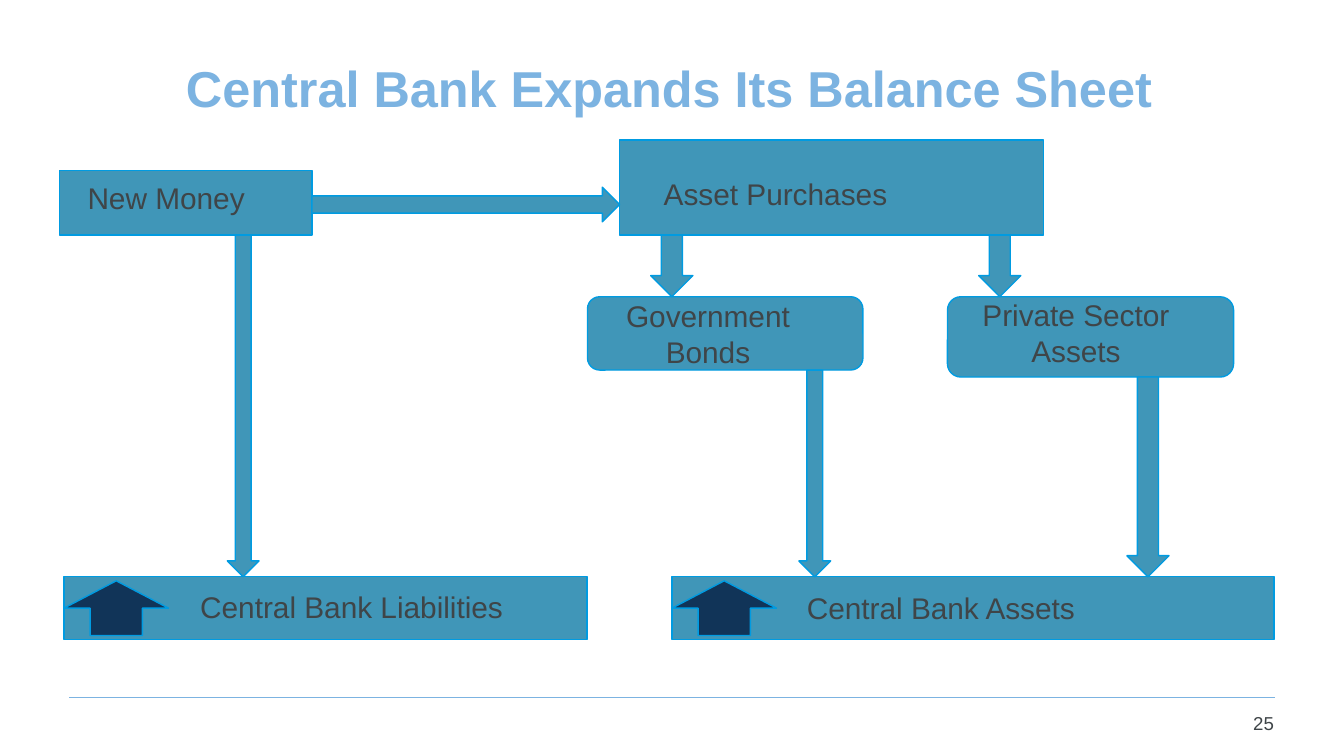
from pptx import Presentation, util as u
from pptx.dml.color import RGBColor
from pptx.enum import shapes, text
from pptx.oxml.ns import qn
from lxml import etree

Pt = u.Pt
KIND = shapes.MSO_SHAPE
ALIGN = text.PP_ALIGN

THEME = {
    "font": "Arial", "title_size": 27, "label_size": 16, "number_size": 10,
    "accent": "7CB3E1", "ink": "3F4548", "box": "4096B8",
    "edge": "009BE1", "rise": "113458",
}
TITLE = "Central Bank Expands Its Balance Sheet"
PAGE_NUMBER = "25"

BOXES = {
    "purchases": (KIND.RECTANGLE, (332, 75, 227, 51)),
    "bonds": (KIND.ROUNDED_RECTANGLE, (314.7, 159, 147.6, 39.3)),
    "private": (KIND.ROUNDED_RECTANGLE, (507.6, 159, 153.3, 43)),
    "money": (KIND.RECTANGLE, (31.8, 91.5, 135.4, 34.5)),
    "liabilities": (KIND.RECTANGLE, (34.3, 309, 280.3, 33.7)),
    "assets": (KIND.RECTANGLE, (360, 309, 322.5, 33.7)),
}
LABELS = [
    ("Asset Purchases", (348.5, 90.6, 193, 26.6), ALIGN.LEFT),
    ("Government Bonds", (319.9, 156, 118.8, 46), ALIGN.CENTER),
    ("Private Sector Assets", (517, 155.5, 118.8, 46), ALIGN.CENTER),
    ("New Money", (39.8, 92.5, 118.8, 26.6), ALIGN.LEFT),
    ("Central Bank Liabilities", (100.2, 312, 192.2, 26.6), ALIGN.LEFT),
    ("Central Bank Assets", (425.2, 312.6, 221, 26.6), ALIGN.LEFT),
]
FLOWS_DOWN = [
    ("purchases", "bonds", 359.9, 22.6),
    ("purchases", "private", 535.6, 22.6),
    ("money", "liabilities", 130.3, 17),
    ("bonds", "assets", 436.5, 17),
    ("private", "assets", 615, 22.6),
]
FLOW_RIGHT = ("money", "purchases", 109.6, 18.6)
RISING = ["liabilities", "assets"]
RISE_WIDTH, RISE_HEIGHT = 56, 29.3


def color(name):
    """Return a theme colour."""
    return RGBColor.from_string(THEME[name])


def add_block(slide, kind, place, fill="box"):
    """Add a filled and outlined preset shape."""
    block = slide.shapes.add_shape(kind, *map(Pt, place))
    block.shadow.inherit = False
    block.fill.solid()
    block.fill.fore_color.rgb = color(fill)
    block.line.color.rgb = color("edge")
    block.line.width = Pt(0.75)


def add_words(slide, words, place, align, size="label_size", ink="ink",
              bold=False, anchor=text.MSO_ANCHOR.TOP):
    """Add a wrapped text box holding one run."""
    frame = slide.shapes.add_textbox(*map(Pt, place)).text_frame
    frame.word_wrap = True
    frame.vertical_anchor = anchor
    paragraph = frame.paragraphs[0]
    paragraph.alignment = align
    run = paragraph.add_run()
    run.text = words
    run.font.name = THEME["font"]
    run.font.size = Pt(THEME[size])
    run.font.bold = bold
    run.font.color.rgb = color(ink)


def add_rule(slide, left, right, y):
    """Add the thin line above the page number."""
    rule = slide.shapes.add_connector(
        shapes.MSO_CONNECTOR.STRAIGHT, Pt(left), Pt(y), Pt(right), Pt(y))
    rule.line.color.rgb = color("accent")
    rule.line.width = Pt(1)
    etree.SubElement(rule._element.spPr, qn("a:effectLst"))


def main():
    """Build the balance sheet slide."""
    deck = Presentation()
    deck.slide_width, deck.slide_height = Pt(720), Pt(405)
    slide = deck.slides.add_slide(deck.slide_layouts[6])

    add_rule(slide, 37, 683, 373.7)
    add_words(slide, TITLE, (34.5, 37.5, 648, 19), ALIGN.CENTER, "title_size",
              "accent", True, text.MSO_ANCHOR.MIDDLE)

    for kind, place in BOXES.values():
        add_block(slide, kind, place)

    for source, target, center, width in FLOWS_DOWN:
        _, top, _, height = BOXES[source][1]
        start, end = top + height, BOXES[target][1][1]
        add_block(slide, KIND.DOWN_ARROW,
                  (center - width / 2, start, width, end - start))

    source, target, middle, thickness = FLOW_RIGHT
    left, _, width, _ = BOXES[source][1]
    start, end = left + width, BOXES[target][1][0]
    add_block(slide, KIND.RIGHT_ARROW,
              (start, middle - thickness / 2, end - start, thickness))

    for name in RISING:
        left, top, _, height = BOXES[name][1]
        add_block(slide, KIND.UP_ARROW,
                  (left, top + (height - RISE_HEIGHT) / 2, RISE_WIDTH, RISE_HEIGHT), "rise")

    for words, place, align in LABELS:
        add_words(slide, words, place, align)
    add_words(slide, PAGE_NUMBER, (638, 378, 51.5, 20), ALIGN.RIGHT, "number_size")

    deck.save("out.pptx")


if __name__ == "__main__":
    main()
